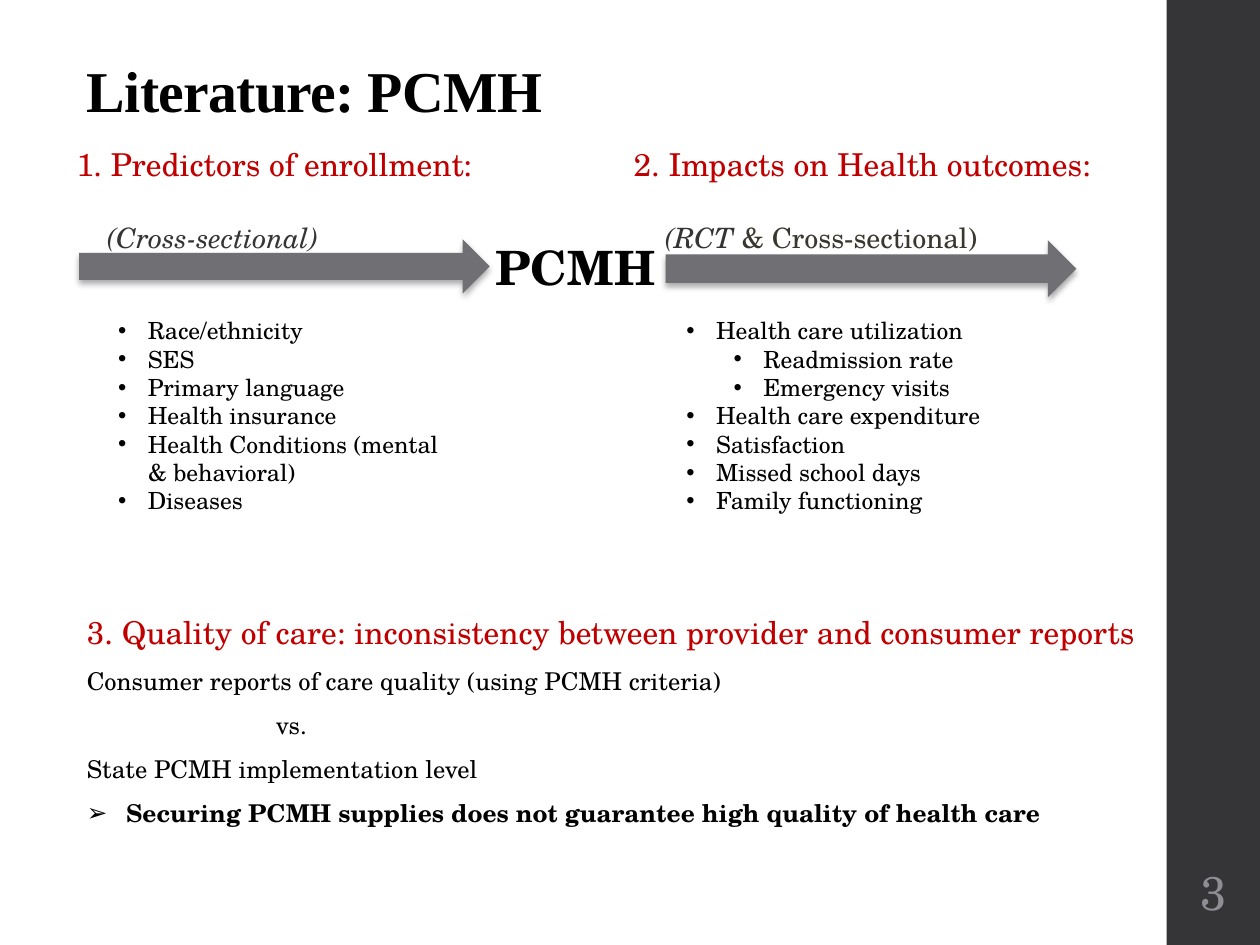
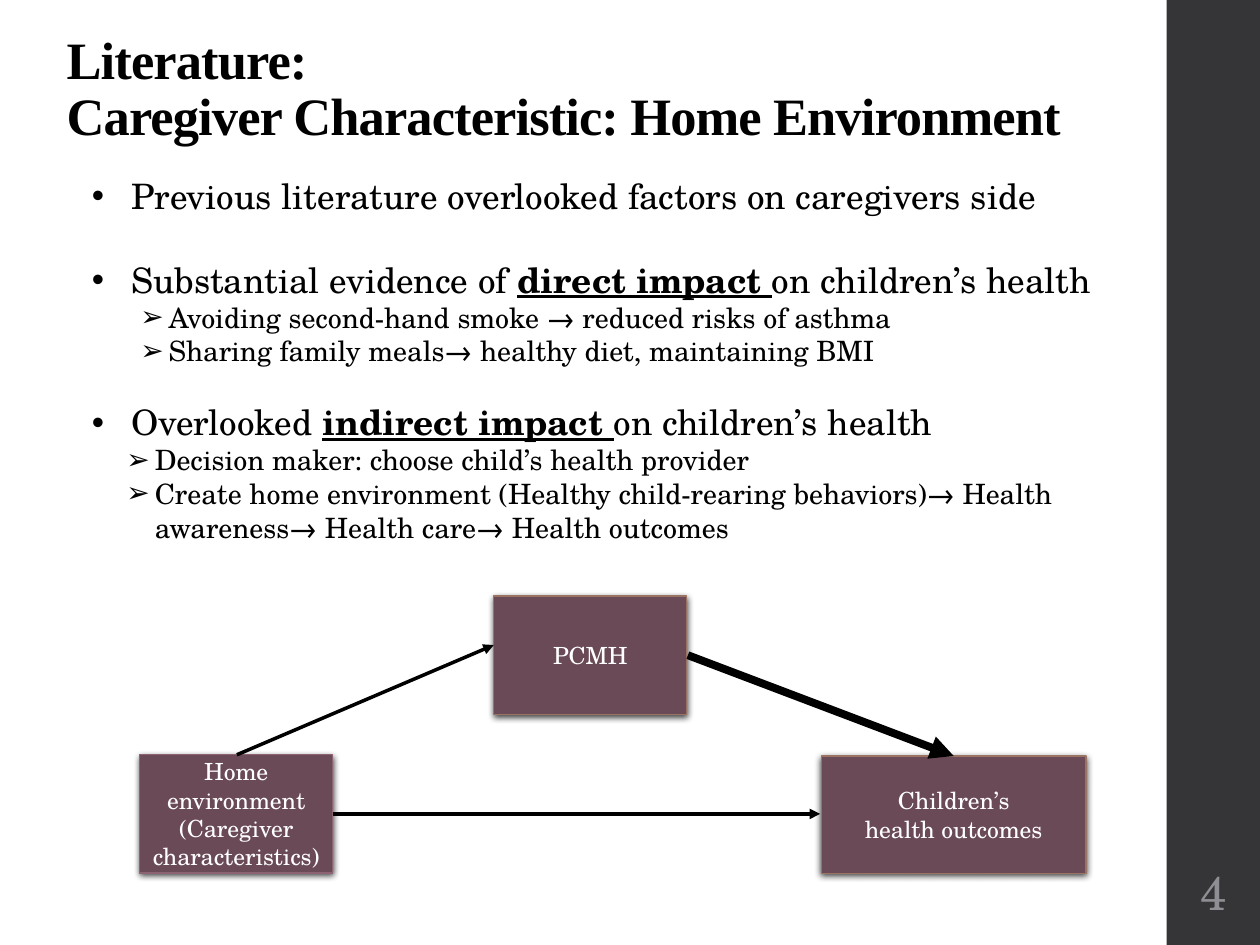
from lxml import etree
from pptx import Presentation
from pptx.dml.color import RGBColor
from pptx.enum.shapes import MSO_CONNECTOR, MSO_SHAPE
from pptx.enum.text import MSO_ANCHOR, MSO_AUTO_SIZE, PP_ALIGN
from pptx.oxml.ns import qn
from pptx.util import Pt

RECTANGLE, RIGHT_ARROW = MSO_SHAPE.RECTANGLE, MSO_SHAPE.RIGHT_ARROW
STRAIGHT = MSO_CONNECTOR.STRAIGHT
TOP, MIDDLE, BOTTOM = MSO_ANCHOR.TOP, MSO_ANCHOR.MIDDLE, MSO_ANCHOR.BOTTOM
LEFT, CENTER = PP_ALIGN.LEFT, PP_ALIGN.CENTER
NO_AUTOFIT = MSO_AUTO_SIZE.NONE

BLACK = RGBColor(0x00, 0x00, 0x00)
WHITE = RGBColor(0xFF, 0xFF, 0xFF)
RED = RGBColor(0xC0, 0x00, 0x00)
CHARCOAL = RGBColor(0x35, 0x35, 0x37)
WARM_GRAY = RGBColor(0x3A, 0x37, 0x2F)
NUMBER_GRAY = RGBColor(0x8E, 0x8E, 0x94)
ARROW_GRAY = RGBColor(0x6F, 0x6F, 0x74)
PLUM = RGBColor(0x6A, 0x4A, 0x57)
TAN = RGBColor(0x9B, 0x73, 0x62)
MAUVE = RGBColor(0x8D, 0x63, 0x74)

BODY_FONT = "TeX Gyre Schola"
TITLE_FONT = "Times New Roman"
BAND_LEFT, BAND_WIDTH = 666.7, 54
LIST_SIZE = 13.5
ARROW_SHADOW = dict(alpha=32, blur=3.5, distance=2.2)
BOX_SHADOW = dict(alpha=75, blur=4, distance=1.2)


# Text
def add_span(para, text, size=LIST_SIZE, color=BLACK, font=BODY_FONT,
             bold=False, italic=False, underline=False, tracking=0):
    span = para.add_run()
    span.text = text
    span.font.name = font
    span.font.size = Pt(size)
    span.font.color.rgb = color
    span.font.bold, span.font.italic = bold, italic
    span.font.underline = underline
    if tracking:
        span._r.get_or_add_rPr().set("spc", str(int(tracking * 100)))


def add_para(frame, content, align=LEFT, line_spacing=1.0, before=0,
             level=0, margin=0, hanging=0, bullet=None, **style):
    """Content is a string, or a list of (text, style changes) pairs."""
    para = frame.paragraphs[-1]
    if para.runs:
        para = frame.add_paragraph()
    para.alignment = align
    para.line_spacing = line_spacing
    para.space_before, para.space_after = Pt(before), Pt(0)
    para.level = level
    properties = para._p.get_or_add_pPr()
    properties.set("marL", str(Pt(margin)))
    properties.set("indent", str(-Pt(hanging)))
    if bullet:
        etree.SubElement(properties, qn("a:buFont")).set("typeface", "Arial")
        etree.SubElement(properties, qn("a:buChar")).set("char", bullet)
    spans = [(content, {})] if isinstance(content, str) else content
    for text, changes in spans:
        add_span(para, text, **{**style, **changes})


def set_frame(frame, anchor=TOP, side=7.2, edge=3.6):
    frame.word_wrap = True
    frame.auto_size = NO_AUTOFIT
    frame.vertical_anchor = anchor
    frame.margin_left = frame.margin_right = Pt(side)
    frame.margin_top = frame.margin_bottom = Pt(edge)
    return frame


def add_text_box(slide, left, top, width, height, **layout):
    box = slide.shapes.add_textbox(Pt(left), Pt(top), Pt(width), Pt(height))
    return set_frame(box.text_frame, **layout)


# Shapes
def add_filled_shape(slide, kind, left, top, width, height, fill,
                     outline=None, shadow=None):
    shape = slide.shapes.add_shape(kind, Pt(left), Pt(top), Pt(width), Pt(height))
    shape.fill.solid()
    shape.fill.fore_color.rgb = fill
    if outline:
        shape.line.color.rgb = outline
        shape.line.width = Pt(0.75)
    else:
        shape.line.fill.background()
    shape.shadow.inherit = False
    if shadow:
        add_shadow(shape, **shadow)
    return shape


def add_shadow(shape, alpha, blur, distance):
    effects = shape._element.spPr.find(qn("a:effectLst"))
    outer = etree.SubElement(effects, qn("a:outerShdw"), blurRad=str(Pt(blur)),
                             dist=str(Pt(distance)), dir="5400000", rotWithShape="0")
    color = etree.SubElement(outer, qn("a:srgbClr"), val=str(BLACK))
    etree.SubElement(color, qn("a:alpha"), val=str(alpha * 1000))


def add_model_box(slide, left, top, width, height, lines, outline=TAN):
    box = add_filled_shape(slide, RECTANGLE, left, top, width, height, PLUM,
                           outline, BOX_SHADOW)
    frame = set_frame(box.text_frame, anchor=MIDDLE, side=5)
    for line in lines:
        add_para(frame, line, align=CENTER, color=WHITE)


def add_arrow_line(slide, start, end, width):
    line = slide.shapes.add_connector(STRAIGHT, *map(Pt, start + end))
    line.line.color.rgb = BLACK
    line.line.width = Pt(width)
    etree.SubElement(line.line._get_or_add_ln(), qn("a:tailEnd"), type="triangle")
    etree.SubElement(line._element.spPr, qn("a:effectLst"))


# Shared slide frame: side band, page number and title
def add_page(deck, number, title_lines, place, size, tracking, side=7.2, edge=3.6):
    page = deck.slides.add_slide(deck.slide_layouts[5])
    add_filled_shape(page, RECTANGLE, BAND_LEFT, 0, BAND_WIDTH, 540, CHARCOAL)
    frame = add_text_box(page, BAND_LEFT, 486, BAND_WIDTH, 46.8,
                         anchor=MIDDLE, side=3.6)
    add_para(frame, str(number), align=CENTER, size=27, color=NUMBER_GRAY)
    title = page.shapes.title
    title.left, title.top, title.width, title.height = map(Pt, place)
    set_frame(title.text_frame, BOTTOM, side, edge)
    for line in title_lines:
        add_para(title.text_frame, line, line_spacing=0.9, size=size,
                 font=TITLE_FONT, bold=True, tracking=tracking)
    return page


def add_topic(page, left, width, heading, method, margin):
    frame = add_text_box(page, left, 79.2, width, 70.6)
    add_para(frame, heading, size=18, color=RED)
    add_para(frame, method, before=21.6, margin=margin, size=16,
             color=CHARCOAL, italic=True)


def add_factor_list(page, left, width, factors):
    frame = add_text_box(page, left, 177.2, width, 127.4)
    for level, factor in factors:
        add_para(frame, factor, level=level, margin=16.9 + 27 * level,
                 hanging=16.9, bullet="•")


def build_pcmh_page(deck):
    page = add_page(deck, 3, ["Literature: PCMH"], (42.5, 21.6, 511.2, 53.3), 33, -0.4)

    # Predictors, leading into PCMH
    add_topic(page, 36.7, 267.8, "1. Predictors of enrollment:",
              "(Cross-sectional)", 17.3)
    add_filled_shape(page, RIGHT_ARROW, 45.2, 136.7, 234.7, 31.1, ARROW_GRAY,
                     shadow=ARROW_SHADOW)
    add_factor_list(page, 60.5, 204.5, [
        (0, "Race/ethnicity"), (0, "SES"), (0, "Primary language"),
        (0, "Health insurance"), (0, "Health Conditions (mental & behavioral)"),
        (0, "Diseases")])

    center = add_text_box(page, 275.8, 132.5, 109.4, 40.3)
    add_para(center, "PCMH", size=27, bold=True)

    # Impacts, leading out of PCMH
    add_topic(page, 355, 311.8, "2. Impacts on Health outcomes:",
              [("(RCT ", {}),
               ("& Cross-sectional)", dict(color=WARM_GRAY, italic=False))], 17.8)
    add_filled_shape(page, RIGHT_ARROW, 380.4, 137.2, 234.7, 32.7, ARROW_GRAY,
                     shadow=ARROW_SHADOW)
    add_factor_list(page, 385.2, 187.2, [
        (0, "Health care utilization"), (1, "Readmission rate"),
        (1, "Emergency visits"), (0, "Health care expenditure"),
        (0, "Satisfaction"), (0, "Missed school days"), (0, "Family functioning")])

    # Quality of care
    quality = add_text_box(page, 42.5, 336.2, 615.6, 141.8)
    add_para(quality, "3. Quality of care: inconsistency between provider and "
             "consumer reports", line_spacing=1.5, size=18, color=RED)
    for text, margin in [("Consumer reports of care quality (using PCMH criteria)", 0),
                         ("vs.", 108), ("State PCMH implementation level", 0)]:
        add_para(quality, text, line_spacing=1.5, margin=margin, size=14)
    add_para(quality, "Securing PCMH supplies does not guarantee high quality of "
             "health care", line_spacing=1.5, margin=22.5, hanging=22.5,
             bullet="➢", size=14, bold=True)


def build_caregiver_page(deck):
    page = add_page(deck, 4, ["Literature:", "Caregiver Characteristic: Home Environment"],
                    (33.1, 32.4, 635, 54.7), 30, -0.5, side=5, edge=2.9)

    # Evidence: main point, gap above it, indent of its details, details
    stress = dict(bold=True, underline=True)
    evidence = [
        ("Previous literature overlooked factors on caregivers side", 0, 0, []),
        ([("Substantial evidence of ", {}), ("direct impact ", stress),
          ("on children’s health", {})], 24, 79.9,
         ["Avoiding second-hand smoke → reduced risks of asthma",
          "Sharing family meals→ healthy diet, maintaining BMI"]),
        ([("Overlooked ", {}), ("indirect impact ", stress),
          ("on children’s health", {})], 19.2, 72,
         ["Decision maker: choose child’s health provider",
          "Create home environment (Healthy child-rearing behaviors)→ Health "
          "awareness→ Health care→ Health outcomes"]),
    ]
    frame = add_text_box(page, 9.4, 96, 645.1, 269)
    for point, gap, margin, details in evidence:
        add_para(frame, point, before=gap, level=1, margin=58.5, hanging=22.5,
                 bullet="•", size=20)
        for detail in details:
            add_para(frame, detail, level=2, margin=margin, hanging=16.2,
                     bullet="➢", size=16)

    # Pathway model
    add_model_box(page, 282.2, 340.6, 110.2, 67.7, ["PCMH"])
    add_model_box(page, 469.4, 432, 151.2, 67, ["Children’s", "health outcomes"])
    add_model_box(page, 79.9, 431.3, 110.2, 67.7,
                  ["Home environment (Caregiver characteristics)"], MAUVE)
    add_arrow_line(page, (393.1, 374.4), (545, 432), 4.5)
    add_arrow_line(page, (190.1, 465.1), (468.7, 465.1), 2)
    add_arrow_line(page, (135.4, 431.3), (282.2, 368.6), 2)


def main():
    deck = Presentation()
    deck.slide_width, deck.slide_height = Pt(720), Pt(540)
    build_pcmh_page(deck)
    build_caregiver_page(deck)
    deck.save("out.pptx")


if __name__ == "__main__":
    main()
